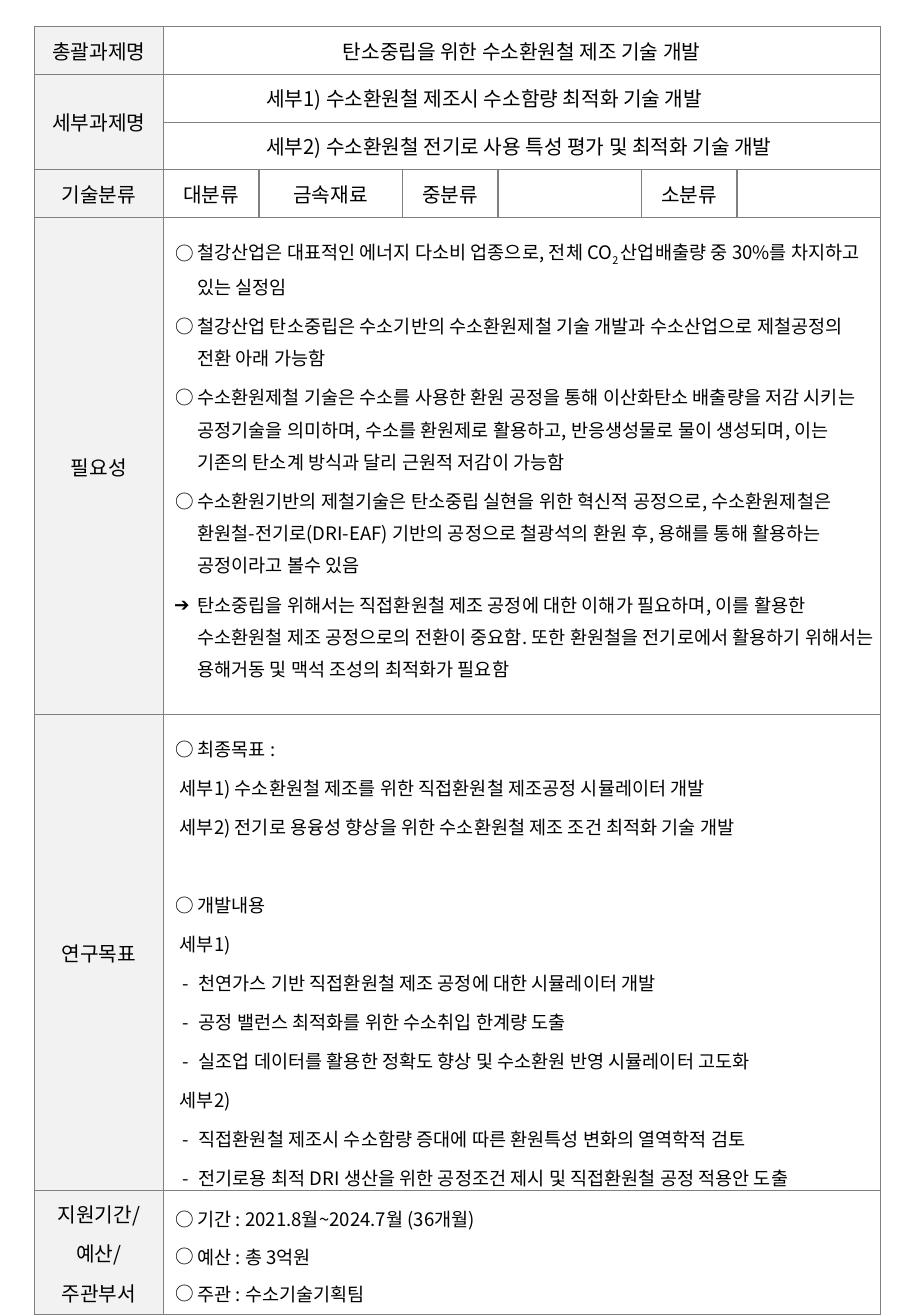
from lxml.etree import SubElement
from pptx import Presentation
from pptx.dml.color import RGBColor
from pptx.enum.text import MSO_ANCHOR, PP_ALIGN
from pptx.oxml.ns import qn
from pptx.util import Pt

FONT = "Noto Sans CJK KR"
COLORS = {"text": "000000", "border": "808080", "label": "F2F2F2", "value": "FFFFFF"}
COLUMN_WIDTHS = [76.4] + [56.7, 85] * 3
ROW_HEIGHTS = [28.4] * 4 + [294.5, 282, 73.5]
LAST_COLUMN = len(COLUMN_WIDTHS) - 1

CIRCLE = dict(bullet="○", left=14.4, hanging=13)
ARROW = dict(bullet="➔", left=14.4, hanging=13.7)
DASH = dict(bullet="-", left=15.2, hanging=9.5)
SUBTASK = dict(left=4)
BODY = dict(size=11, before=4, spacing=1.2)

NEEDS = [
    (CIRCLE, "철강산업은 대표적인 에너지 다소비 업종으로, 전체 CO|2 |산업배출량 중 30%를 차지하고 있는 실정임"),
    (CIRCLE, "철강산업 탄소중립은 수소기반의 수소환원제철 기술 개발과 수소산업으로 제철공정의 전환 아래 가능함"),
    (CIRCLE, "수소환원제철 기술은 수소를 사용한 환원 공정을 통해 이산화탄소 배출량을 저감 시키는 "
             "공정기술을 의미하며, 수소를 환원제로 활용하고, 반응생성물로 물이 생성되며, 이는 "
             "기존의 탄소계 방식과 달리 근원적 저감이 가능함"),
    (CIRCLE, "수소환원기반의 제철기술은 탄소중립 실현을 위한 혁신적 공정으로, 수소환원제철은 "
             "환원철-전기로(DRI-EAF) 기반의 공정으로 철광석의 환원 후, 용해를 통해 활용하는 "
             "공정이라고 볼수 있음"),
    (ARROW, "탄소중립을 위해서는 직접환원철 제조 공정에 대한 이해가 필요하며, 이를 활용한 "
            "수소환원철 제조 공정으로의 전환이 중요함. 또한 환원철을 전기로에서 활용하기 "
            "위해서는 용해거동 및 맥석 조성의 최적화가 필요함"),
]
GOALS = [
    (CIRCLE, "최종목표 :"),
    (SUBTASK, "세부1) 수소환원철 제조를 위한 직접환원철 제조공정 시뮬레이터 개발"),
    (SUBTASK, "세부2) 전기로 용융성 향상을 위한 수소환원철 제조 조건 최적화 기술 개발"),
    (CIRCLE | dict(before=27.1), "개발내용"),
    (SUBTASK, "세부1)"),
    (DASH, "천연가스 기반 직접환원철 제조 공정에 대한 시뮬레이터 개발"),
    (DASH, "공정 밸런스 최적화를 위한 수소취입 한계량 도출"),
    (DASH, "실조업 데이터를 활용한 정확도 향상 및 수소환원 반영 시뮬레이터 고도화"),
    (SUBTASK, "세부2)"),
    (DASH, "직접환원철 제조시 수소함량 증대에 따른 환원특성 변화의 열역학적 검토"),
    (DASH, "전기로용 최적 DRI 생산을 위한 공정조건 제시 및 직접환원철 공정 적용안 도출"),
]
SUPPORT = ["기간 : 2021.8월~2024.7월 (36개월)", "예산 : 총 3억원", "주관 : 수소기술기획팀"]


def write_paragraph(paragraph, text, size=12, align=PP_ALIGN.LEFT, before=6,
                    spacing=None, bullet=None, left=0, hanging=0):
    """Format the paragraph and add its runs; text between bars is subscript."""
    paragraph.alignment = align
    paragraph.space_before = Pt(before)
    if spacing:
        paragraph.line_spacing = spacing
    properties = paragraph._p.get_or_add_pPr()
    properties.set("marL", str(Pt(left)))
    properties.set("indent", str(-Pt(hanging)))
    if bullet:
        SubElement(properties, qn("a:buFont"), typeface=FONT)
        SubElement(properties, qn("a:buChar"), char=bullet)
    for index, part in enumerate(text.split("|")):
        run = paragraph.add_run()
        run.text = part
        run.font.size = Pt(size)
        run.font.name = FONT
        run.font.color.rgb = RGBColor.from_string(COLORS["text"])
        run_properties = run._r.get_or_add_rPr()
        SubElement(run_properties, qn("a:ea"), typeface=FONT)
        if index % 2:
            run_properties.set("baseline", "-25000")


def fill_cell(cell, items, **text_format):
    """Write (own format, text) items, one paragraph each."""
    frame = cell.text_frame
    for index, (own_format, text) in enumerate(items):
        paragraph = frame.add_paragraph() if index else frame.paragraphs[0]
        write_paragraph(paragraph, text, **(text_format | own_format))


def write_label(cell, *lines, **text_format):
    fill_cell(cell, [({}, line) for line in lines], align=PP_ALIGN.CENTER, **text_format)


def write_body(cell, items, **text_format):
    cell.vertical_anchor = MSO_ANCHOR.TOP
    cell.margin_left, cell.margin_top, cell.margin_right = Pt(5.76), Pt(8.64), 0
    fill_cell(cell, items, **text_format)


def style_cell(cell, fill, open_sides):
    cell.margin_left = cell.margin_right = Pt(4.3)
    cell.margin_top = cell.margin_bottom = 0
    cell.vertical_anchor = MSO_ANCHOR.MIDDLE
    properties = cell._tc.get_or_add_tcPr()
    for side in "LRTB":
        line = SubElement(properties, qn("a:ln" + side), w=str(Pt(0.75)))
        if side in open_sides:
            SubElement(line, qn("a:noFill"))
        else:
            color = SubElement(line, qn("a:solidFill"))
            SubElement(color, qn("a:srgbClr"), val=COLORS["border"])
    cell.fill.solid()
    cell.fill.fore_color.rgb = RGBColor.from_string(COLORS[fill])


def add_form_table(slide):
    table = slide.shapes.add_table(
        len(ROW_HEIGHTS), len(COLUMN_WIDTHS), Pt(20.4), Pt(15.6),
        Pt(sum(COLUMN_WIDTHS)), Pt(sum(ROW_HEIGHTS))).table
    table.first_row = table.horz_banding = False
    for column, width in zip(table.columns, COLUMN_WIDTHS):
        column.width = Pt(width)
    for row, height in zip(table.rows, ROW_HEIGHTS):
        row.height = Pt(height)
    subtask_sides = {1: "R", 2: "L"}
    for row_index, row in enumerate(table.rows):
        for column_index, cell in enumerate(row.cells):
            open_sides = subtask_sides.get(column_index, "") if row_index in (1, 2) else ""
            style_cell(cell, "value" if column_index else "label", open_sides)
    for row_index in (0, 4, 5, 6):
        table.cell(row_index, 1).merge(table.cell(row_index, LAST_COLUMN))
    for row_index in (1, 2):
        table.cell(row_index, 2).merge(table.cell(row_index, LAST_COLUMN))
    table.cell(1, 0).merge(table.cell(2, 0))
    return table


def main():
    presentation = Presentation()
    presentation.slide_width, presentation.slide_height = Pt(540), Pt(780)
    slide = presentation.slides.add_slide(presentation.slide_layouts[6])
    table = add_form_table(slide)

    labels = {0: ["총괄과제명"], 1: ["세부과제명"], 3: ["기술분류"], 4: ["필요성"],
              5: ["연구목표"], 6: ["지원기간/", "예산/", "주관부서"]}
    for row_index, lines in labels.items():
        write_label(table.cell(row_index, 0), *lines)
    write_label(table.cell(0, 1), "탄소중립을 위한 수소환원철 제조 기술 개발", before=2)
    subtasks = ["세부1) 수소환원철 제조시 수소함량 최적화 기술 개발",
                "세부2) 수소환원철 전기로 사용 특성 평가 및 최적화 기술 개발"]
    for row_index, subtask in enumerate(subtasks, start=1):
        fill_cell(table.cell(row_index, 2), [({}, subtask)])
    categories = {1: "대분류", 2: "금속재료", 3: "중분류", 5: "소분류"}
    for column_index, category in categories.items():
        write_label(table.cell(3, column_index), category)

    write_body(table.cell(4, 1), NEEDS, **BODY)
    write_body(table.cell(5, 1), GOALS, **BODY)
    write_body(table.cell(6, 1), [(CIRCLE, line) for line in SUPPORT],
               size=11, hanging=14.4)
    presentation.save("out.pptx")


if __name__ == "__main__":
    main()
